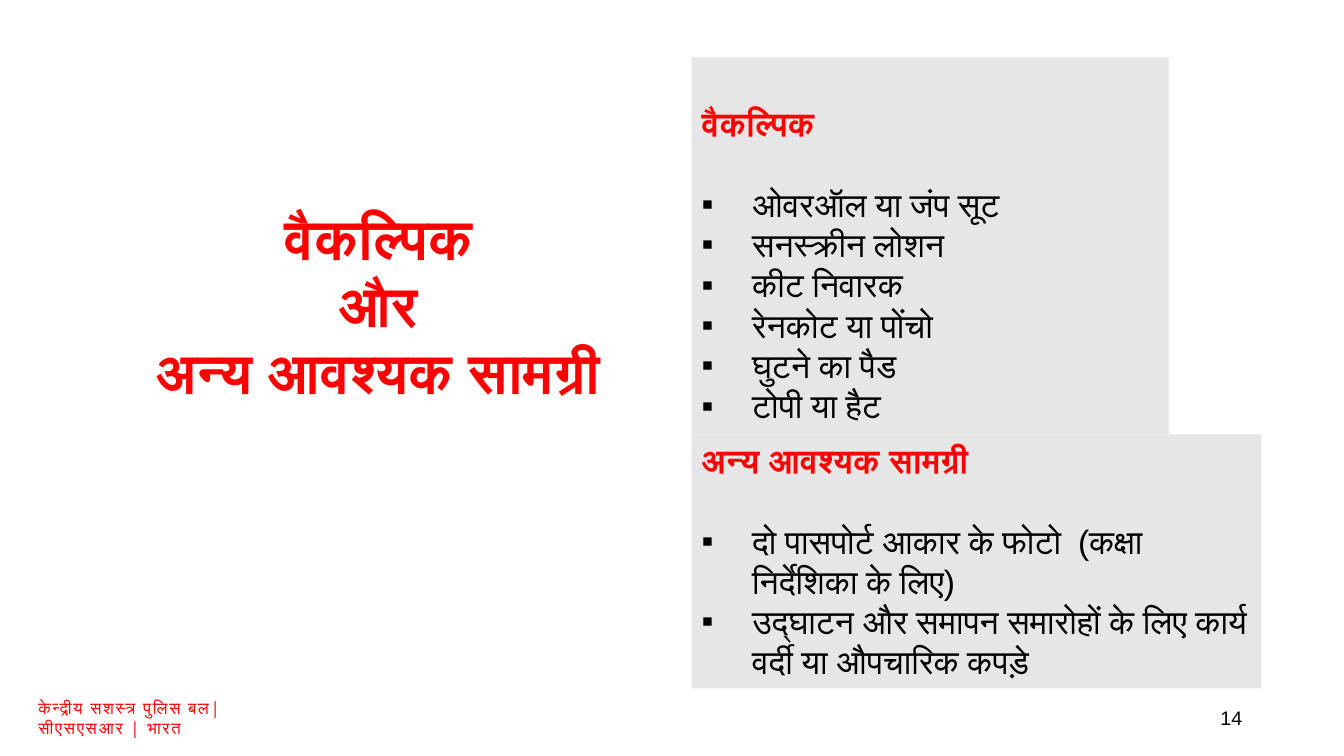
"""Build the Hindi slide on optional and other essential items."""
import pptx
import pptx.dml.color
import pptx.enum.text
import pptx.oxml.ns
import pptx.util
from dataclasses import dataclass
from lxml import etree

TITLE = ["वैकल्पिक", "और", "अन्य आवश्यक सामग्री"]
TITLE_BOX = (1.1, 1.97, 5.31, 2.79)
PANELS = [
    {
        "heading": "वैकल्पिक",
        "items": [
            "ओवरऑल या जंप सूट",
            "सनस्क्रीन लोशन",
            "कीट निवारक",
            "रेनकोट या पोंचो",
            "घुटने का पैड",
            "टोपी या हैट",
        ],
        "box": (6.86, 0.57, 4.73, 3.74),
        "top_inset": 0.45,
    },
    {
        "heading": "अन्य आवश्यक सामग्री",
        "items": [
            "दो पासपोर्ट आकार के फोटो  (कक्षा निर्देशिका के लिए)",
            "उद्घाटन और समापन समारोहों के लिए कार्य वर्दी या औपचारिक कपड़े",
        ],
        "box": (6.86, 4.31, 5.65, 2.52),
        "top_inset": 0.05,
    },
]
FOOTER = "केन्द्रीय सशस्त्र पुलिस बल|सीएसएसआर | भारत"
FOOTER_BOX = (0.34, 6.88, 2.56, 0.49)
PAGE_NUMBER = "14"
NUMBER_BOX = (9.42, 6.95, 3, 0.4)


@dataclass(frozen=True)
class Theme:
    """Colours, fonts and type sizes."""
    red: str = "FF0000"
    black: str = "000000"
    panel: str = "E7E6E6"
    display: str = "Open Sans"
    body: str = "Arial"
    title_size: int = 40
    body_size: int = 24
    number_size: int = 14
    footer_size: int = 12
    heading_gap: int = 29


THEME = Theme()
ALIGN = pptx.enum.text.PP_ALIGN


def colour(value):
    """Return an RGB colour."""
    return pptx.dml.color.RGBColor.from_string(value)


def place(shape, box):
    """Set position and size in inches."""
    shape.left, shape.top, shape.width, shape.height = map(pptx.util.Inches, box)


def prepare(shape, side=0.1, top=0.05, bottom=0.05):
    """Return a wrapped, top-anchored text frame with insets in inches."""
    frame = shape.text_frame
    frame.word_wrap = True
    frame.auto_size = pptx.enum.text.MSO_AUTO_SIZE.NONE
    frame.vertical_anchor = pptx.enum.text.MSO_ANCHOR.TOP
    frame.margin_left = frame.margin_right = pptx.util.Inches(side)
    frame.margin_top = pptx.util.Inches(top)
    frame.margin_bottom = pptx.util.Inches(bottom)
    return frame


def style(para, name, size, shade, bold=False, align=ALIGN.LEFT, before=0):
    """Format one paragraph."""
    para.alignment = align
    para.space_before = pptx.util.Pt(before)
    para.font.name = name
    para.font.size = pptx.util.Pt(size)
    para.font.bold = bold
    para.font.color.rgb = colour(shade)


def set_bullet(para, symbol=None):
    """Give a paragraph a hanging bullet, or none."""
    qn = pptx.oxml.ns.qn
    props = para._p.get_or_add_pPr()
    indent = pptx.util.Inches(0.5) if symbol else 0
    props.set("marL", str(indent))
    props.set("indent", str(-indent))
    if not symbol:
        etree.SubElement(props, qn("a:buNone"))
        return
    shade = etree.SubElement(props, qn("a:buClr"))
    etree.SubElement(shade, qn("a:srgbClr"), val=THEME.black)
    etree.SubElement(props, qn("a:buFont"), typeface=THEME.body)
    etree.SubElement(props, qn("a:buChar"), char=symbol)


def add_title(page):
    """Fill the title placeholder."""
    title = page.shapes.title
    place(title, TITLE_BOX)
    frame = prepare(title)
    frame.text = "\n".join(TITLE)
    for para in frame.paragraphs:
        style(para, THEME.display, THEME.title_size, THEME.red, True, ALIGN.CENTER)


def fill_panel(shape, panel):
    """Fill a body placeholder with a heading and its list."""
    place(shape, panel["box"])
    shape.fill.solid()
    shape.fill.fore_color.rgb = colour(THEME.panel)
    frame = prepare(shape, top=panel["top_inset"])
    frame.text = "\n".join([panel["heading"], *panel["items"]])
    heading, *items = frame.paragraphs
    set_bullet(heading)
    style(heading, THEME.body, THEME.body_size, THEME.red, True)
    for index, para in enumerate(items):
        set_bullet(para, "▪")
        gap = 0 if index else THEME.heading_gap
        style(para, THEME.body, THEME.body_size, THEME.black, before=gap)


def add_label(page, text, box, inset, *look, **options):
    """Add a one-paragraph text box and return its paragraph."""
    label = page.shapes.add_textbox(*map(pptx.util.Inches, box))
    frame = prepare(label, *inset)
    frame.text = text
    para = frame.paragraphs[0]
    style(para, *look, **options)
    return para


def main():
    """Create and save the deck."""
    deck = pptx.Presentation()
    deck.slide_width = pptx.util.Inches(13.33)
    deck.slide_height = pptx.util.Inches(7.5)
    page = deck.slides.add_slide(deck.slide_layouts.get_by_name("Two Content"))
    add_title(page)
    for index, panel in enumerate(PANELS, start=1):
        fill_panel(page.placeholders[index], panel)
    footer = add_label(page, FOOTER, FOOTER_BOX, (0.04, 0.04, 0.04),
                       THEME.display, THEME.footer_size, THEME.red)
    for span in footer.runs:
        span._r.get_or_add_rPr().set("spc", "120")
    add_label(page, PAGE_NUMBER, NUMBER_BOX, (0.1, 0.05, 0.05),
              THEME.body, THEME.number_size, THEME.black, align=ALIGN.RIGHT)
    deck.save("out.pptx")


if __name__ == "__main__":
    main()
